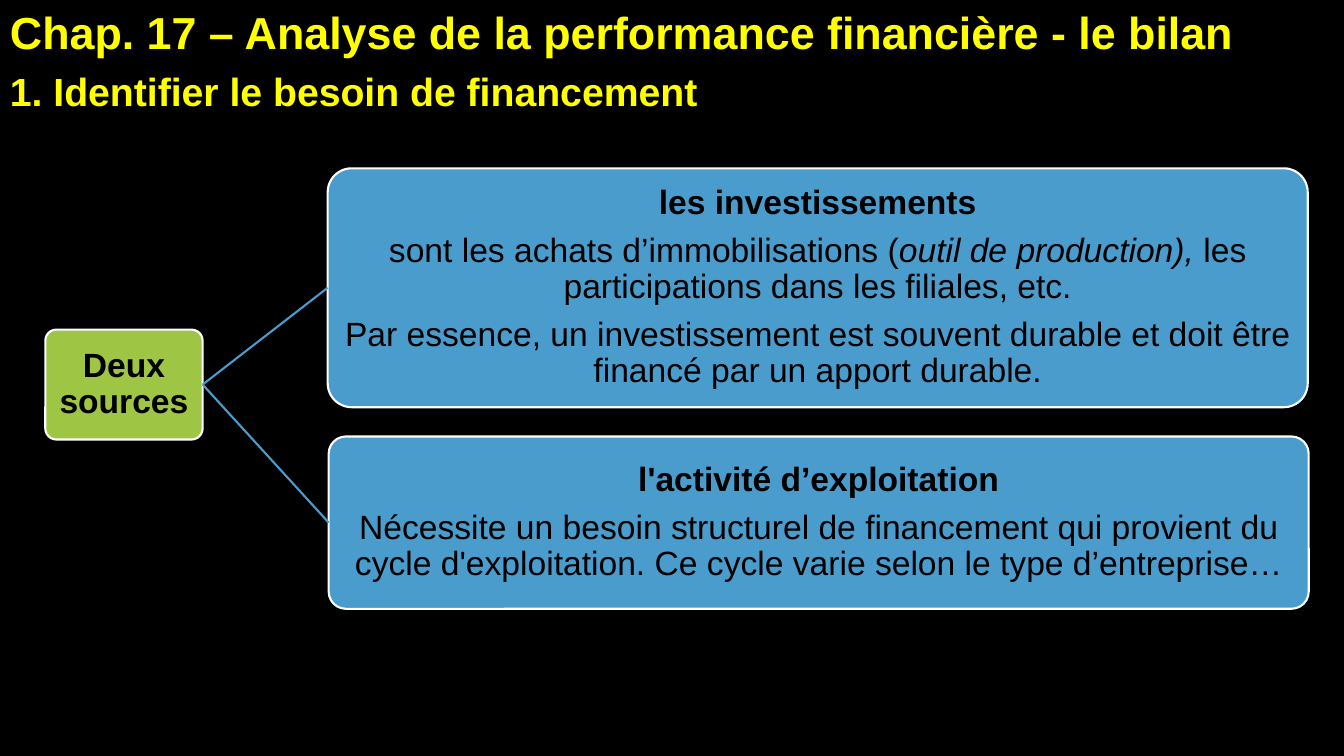
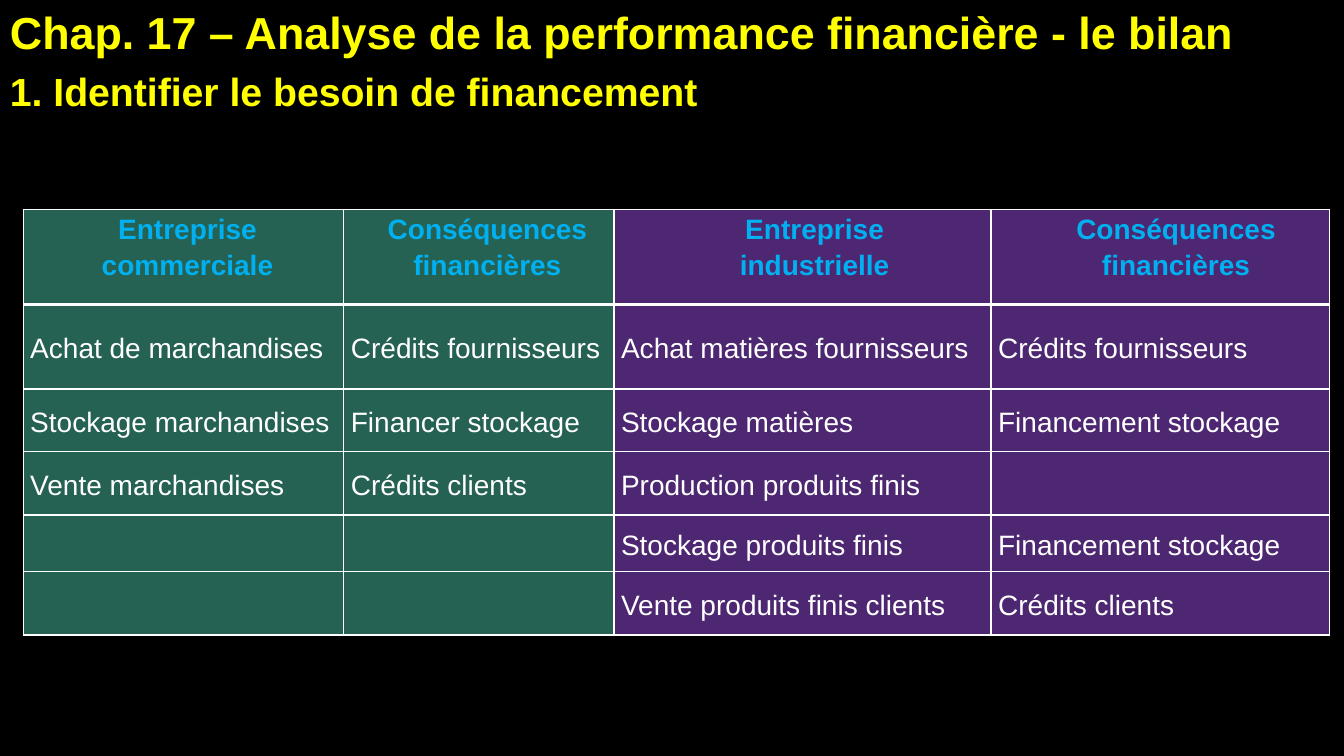
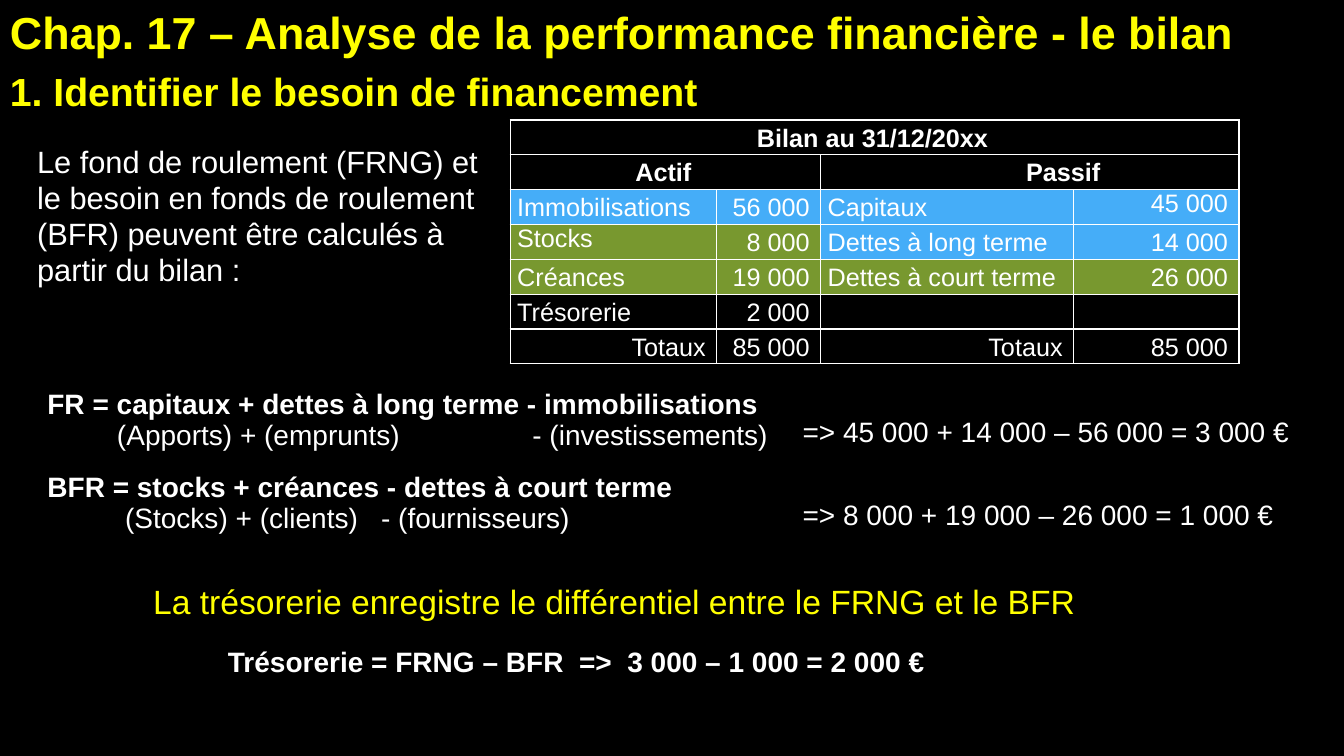
"""Build three slides on the financing need and the balance sheet."""
from lxml import etree
from pptx import Presentation
from pptx.dml.color import RGBColor
from pptx.enum import shapes as es, text as et
from pptx.oxml.ns import qn
from pptx.util import Inches, Pt

BLACK = RGBColor(0x00, 0x00, 0x00)
WHITE = RGBColor(0xFF, 0xFF, 0xFF)
YELLOW = RGBColor(0xFF, 0xFF, 0x00)
LIME = RGBColor(0x9E, 0xC5, 0x44)
BLUE = RGBColor(0x4A, 0x9C, 0xCC)
CYAN = RGBColor(0x00, 0xB0, 0xF0)
TEAL = RGBColor(0x25, 0x62, 0x53)
PURPLE = RGBColor(0x4D, 0x27, 0x71)
SKY = RGBColor(0x45, 0xAD, 0xF8)
OLIVE = RGBColor(0x78, 0x98, 0x2F)
LEFT, MID, RIGHT = et.PP_ALIGN.LEFT, et.PP_ALIGN.CENTER, et.PP_ALIGN.RIGHT


def write(frame, paras, size, color=WHITE, align=LEFT, lead=1.0, before=0, after=0, left=0):
    """Fill a frame with paragraphs, each a list of (text, style letters) runs."""
    frame.word_wrap = True
    for num, runs in enumerate(paras):
        para = frame.add_paragraph() if num else frame.paragraphs[0]
        para.alignment, para.line_spacing = align, lead
        para.space_before, para.space_after = Pt(before), Pt(after)
        if left:
            para._p.get_or_add_pPr().set("marL", str(Inches(left)))
        for words, style in runs:
            run = para.add_run()
            run.text = words
            font = run.font
            font.name, font.size, font.color.rgb = "Arial", Pt(size), color
            font.bold, font.italic = "b" in style, "i" in style


def grid(slide, x, y, cols, rows, line=0, head=0, right=0.08, inset=0.07):
    """Add a plain table; line and head are border widths in points."""
    frame = slide.shapes.add_table(len(rows), len(cols), Inches(x), Inches(y),
                                   Inches(sum(cols)), Inches(sum(rows)))
    table = frame.table
    table.first_row = table.horz_banding = False
    for col, width in zip(table.columns, cols):
        col.width = Inches(width)
    for num, (row, high) in enumerate(zip(table.rows, rows)):
        row.height = Inches(high)
        for cell in row.cells:
            cell.margin_left, cell.margin_right = Inches(inset), Inches(right)
            cell.margin_top = cell.margin_bottom = 0
            prop = cell._tc.get_or_add_tcPr()
            for side in "LRTB":
                thick = head and (num, side) in ((0, "B"), (1, "T"))
                edge = etree.SubElement(prop, qn("a:ln" + side), w=str(Pt(head if thick else line)))
                if line:
                    paint = etree.SubElement(edge, qn("a:solidFill"))
                    etree.SubElement(paint, qn("a:srgbClr"), val=str(WHITE))
                else:
                    etree.SubElement(edge, qn("a:noFill"))
            cell.fill.background()
    return table


deck = Presentation()
deck.slide_width, deck.slide_height = Inches(13.33), Inches(7.5)
back = deck.slide_master.background.fill
back.solid()
back.fore_color.rgb = BLACK

slides = []
for _ in range(3):
    slide = deck.slides.add_slide(deck.slide_layouts[6])
    title = slide.shapes.add_textbox(0, 0, Inches(12.89), Inches(1.19)).text_frame
    write(title, [[("Chap. 17 – Analyse de la performance financière - le bilan", "b")]],
          32, YELLOW, before=3, after=3)
    para = title.add_paragraph()
    para.space_before = para.space_after = Pt(3)
    run = para.add_run()
    run.text = "1. Identifier le besoin de financement"
    run.font.name, run.font.size, run.font.bold = "Arial", Pt(28), True
    run.font.color.rgb = YELLOW
    slides.append(slide)
needs, cycle, sheet = slides

nodes = [
    (0.45, 3.27, 1.56, 1.09, LIME, [[("Deux sources", "b")]]),
    (3.25, 1.67, 9.72, 2.37, BLUE, [
        [("les investissements", "b")],
        [("sont les achats d’immobilisations (", ""), ("outil de production), ", "i"),
         ("les participations dans les filiales, etc.", "")],
        [("Par essence, un investissement est souvent durable et doit être "
          "financé par un apport durable.", "")]]),
    (3.26, 4.33, 9.72, 1.71, BLUE, [
        [("l'activité d’exploitation", "b")],
        [("Nécessite un besoin structurel de financement qui provient du cycle "
          "d'exploitation. Ce cycle varie selon le type d’entreprise…", "")]]),
]
boxes = []
for x, y, wide, high, color, paras in nodes:
    box = needs.shapes.add_shape(es.MSO_SHAPE.ROUNDED_RECTANGLE, Inches(x), Inches(y),
                                 Inches(wide), Inches(high))
    box.adjustments[0] = 0.1
    box.shadow.inherit = False
    box.fill.solid()
    box.fill.fore_color.rgb = color
    box.line.color.rgb, box.line.width = WHITE, Pt(1.5)
    frame = box.text_frame
    frame.vertical_anchor = et.MSO_ANCHOR.MIDDLE
    frame.margin_left = frame.margin_right = Inches(0.02)
    frame.margin_top = frame.margin_bottom = Inches(0.02)
    write(frame, paras, 24, BLACK, MID, 0.9, after=8.4)
    boxes.append(box)
for box in boxes[1:]:
    link = needs.shapes.add_connector(es.MSO_CONNECTOR.STRAIGHT, 0, 0, 0, 0)
    link.begin_connect(boxes[0], 3)
    link.end_connect(box, 1)
    link.line.color.rgb, link.line.width = BLUE, Pt(1.5)
    etree.SubElement(link._element.spPr, qn("a:effectLst"))

heads = [("Entreprise", "commerciale", 0.09), ("Conséquences", "financières", 0.18),
         ("Entreprise", "industrielle", 0.25), ("Conséquences", "financières", 0.32)]
steps = [
    ("Achat de marchandises", "Crédits fournisseurs",
     "Achat matières fournisseurs", "Crédits fournisseurs"),
    ("Stockage marchandises", "Financer stockage", "Stockage matières", "Financement stockage"),
    ("Vente marchandises", "Crédits clients", "Production produits finis", ""),
    ("", "", "Stockage produits finis", "Financement stockage"),
    ("", "", "Vente produits finis clients", "Crédits clients"),
]
table = grid(cycle, 0.23, 2.08, [3.18, 2.68, 3.74, 3.36],
             [0.94, 0.84, 0.62, 0.63, 0.56, 0.63], line=1, head=3)
for col, (top, low, left) in enumerate(heads):
    write(table.cell(0, col).text_frame, [[(top, "b")], [(low, "b")]], 20, CYAN, MID, 1.15, left=left)
    for row in range(6):
        cell = table.cell(row, col)
        cell.fill.solid()
        cell.fill.fore_color.rgb = TEAL if col < 2 else PURPLE
        if row and steps[row - 1][col]:
            cell.vertical_anchor = et.MSO_ANCHOR.MIDDLE
            write(cell.text_frame, [[(steps[row - 1][col], "")]], 20, lead=1.15, before=6, after=6)

intro = sheet.shapes.add_textbox(Inches(0.27), Inches(1.39), Inches(4.66), Inches(1.54))
write(intro.text_frame, [[("Le fond de roulement (FRNG) et le besoin en fonds de roulement (BFR) "
                           "peuvent être calculés à partir du bilan :", "")]],
      22, lead=0.97, before=6, after=6)

lines = [
    ("Immobilisations", "56 000", "Capitaux", "45 000", SKY, SKY),
    ("Stocks", "8 000", "Dettes à long terme", "14 000", OLIVE, SKY),
    ("Créances", "19 000", "Dettes à court terme", "26 000", OLIVE, OLIVE),
    ("Trésorerie", "2 000", "", "", None, None),
    ("Totaux", "85 000", "Totaux", "85 000", None, None),
]
table = grid(sheet, 5.06, 1.19, [2.05, 1.03, 2.51, 1.64], [2.42 / 7] * 7, line=1, right=0.11)
for row, col, last, words, left in [(0, 0, 3, "Bilan au 31/12/20xx", 0),
                                    (1, 0, 1, "Actif", 0), (1, 2, 3, "Passif", 0.7)]:
    cell = table.cell(row, col)
    cell.merge(table.cell(row, last))
    write(cell.text_frame, [[(words, "b")]], 18, align=MID, lead=1.15, left=left)
for row, (*words, debit, credit) in enumerate(lines, 2):
    for col, word in enumerate(words):
        cell = table.cell(row, col)
        color = debit if col < 2 else credit
        if color:
            cell.fill.solid()
            cell.fill.fore_color.rgb = color
        if word:
            write(cell.text_frame, [[(word, "")]], 18, align=RIGHT if col % 2 or row == 6 else LEFT,
                  lead=1.0 if word in ("Stocks", "45 000") else 1.15)

sums = [
    ("FR = capitaux + dettes à long terme - immobilisations",
     "\t(Apports) + (emprunts)\t- (investissements)", (0.69, 4.81),
     "=> 45 000 + 14 000 – 56 000 = 3 000 €"),
    ("BFR = stocks + créances - dettes à court terme",
     "\t(Stocks) + (clients)\t- (fournisseurs)", (0.77, 3.31),
     "=> 8 000 + 19 000 – 26 000 = 1 000 €"),
]
table = grid(sheet, 0.47, 3.86, [7.49, 4.98], [0.82, 0.82], inset=0)
for row, (rule, gloss, stops, total) in enumerate(sums):
    frame = table.cell(row, 0).text_frame
    write(frame, [[(rule, "b")], [(gloss, "")]], 20)
    tabs = etree.SubElement(frame.paragraphs[1]._p.get_or_add_pPr(), qn("a:tabLst"))
    for stop in stops:
        etree.SubElement(tabs, qn("a:tab"), pos=str(Inches(stop)), algn="l")
    cell = table.cell(row, 1)
    cell.vertical_anchor = et.MSO_ANCHOR.MIDDLE
    write(cell.text_frame, [[(total, "")]], 20, lead=1.15)

note = sheet.shapes.add_textbox(Inches(1.42), Inches(5.65), Inches(10.15), Inches(0.57))
write(note.text_frame, [[("La trésorerie enregistre le différentiel entre le FRNG et le BFR", "")]],
      24, YELLOW, lead=1.15, after=6)
table = grid(sheet, 2.26, 6.37, [11], [0.35], inset=0)
write(table.cell(0, 0).text_frame,
      [[("Trésorerie = FRNG – BFR  =>  3 000 – 1 000 = 2 000 €", "b")]], 20, lead=1.15)

deck.save("out.pptx")
